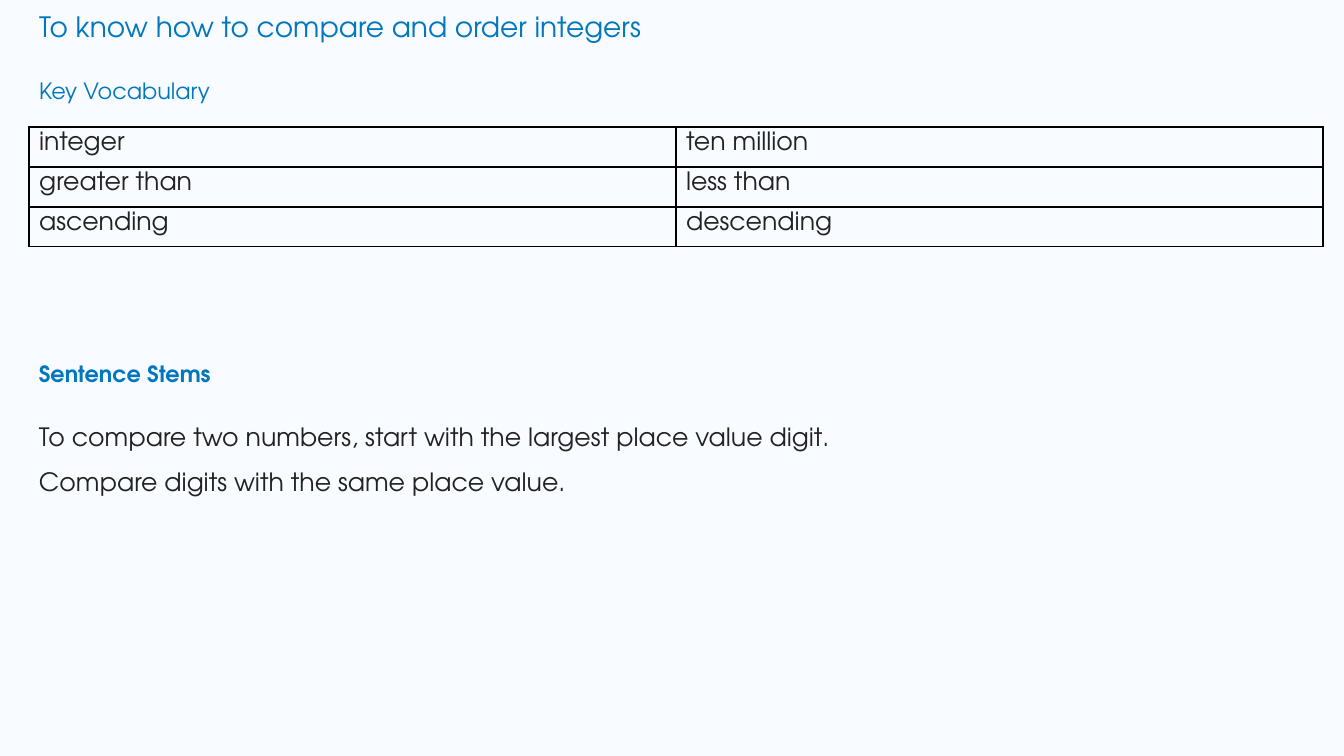
from pptx import Presentation
from pptx.dml.color import RGBColor
from pptx.enum.text import MSO_ANCHOR, MSO_AUTO_SIZE, PP_ALIGN
from pptx.oxml import parse_xml
from pptx.oxml.ns import nsdecls
from pptx.util import Pt

EMU_PER_PX = 914400 / 100.8
FONT = "TeX Gyre Adventor"
COLOURS = {"page": "F8FBFF", "heading": "0277BD", "text": "222222", "border": "000000"}
LEFT = 29
CONTENT_WIDTH = 1294
ROW_HEIGHT = 40
VOCABULARY = [
    ("integer", "ten million"),
    ("greater than", "less than"),
    ("ascending", "descending"),
]
STEMS = [
    "To compare two numbers, start with the largest place value digit.",
    "Compare digits with the same place value.",
]


def px(length):
    return round(length * EMU_PER_PX)


def rgb(name):
    return RGBColor.from_string(COLOURS[name])


def place(box, left, top, width, height):
    box.left, box.top, box.width, box.height = map(px, (left, top, width, height))


def write(frame, lines, size, colour, bold=False, spacing=1):
    frame.word_wrap = True
    for index, line in enumerate(lines):
        para = frame.paragraphs[0] if index == 0 else frame.add_paragraph()
        para.alignment = PP_ALIGN.LEFT
        para.line_spacing = spacing
        para.space_before = Pt(0)
        span = para.add_run()
        span.text = line
        span.font.name = FONT
        span.font.size = Pt(size)
        span.font.bold = bold
        span.font.color.rgb = rgb(colour)


def fill_box(box, area, lines, size, colour, **style):
    place(box, *area)
    frame = box.text_frame
    frame.auto_size = MSO_AUTO_SIZE.NONE
    frame.vertical_anchor = MSO_ANCHOR.TOP
    write(frame, lines, size, colour, **style)


def remove_bullet(para):
    properties = para._p.get_or_add_pPr()
    properties.set("marL", "0")
    properties.set("indent", "0")
    properties.append(parse_xml(f"<a:buNone {nsdecls('a')}/>"))


def add_borders(cell):
    properties = cell._tc.get_or_add_tcPr()
    for index, side in enumerate(("lnL", "lnR", "lnT", "lnB")):
        border = parse_xml(
            f'<a:{side} {nsdecls("a")} w="{Pt(1)}"><a:solidFill>'
            f'<a:srgbClr val="{COLOURS["border"]}"/></a:solidFill></a:{side}>'
        )
        properties.insert(index, border)


def add_vocabulary_table(page, top):
    row_count, column_count = len(VOCABULARY), len(VOCABULARY[0])
    area = map(px, (LEFT, top, CONTENT_WIDTH, ROW_HEIGHT * row_count))
    table = page.shapes.add_table(row_count, column_count, *area).table
    table.first_row = False
    table.horz_banding = False
    for row, words in enumerate(VOCABULARY):
        for column, word in enumerate(words):
            cell = table.cell(row, column)
            cell.fill.background()
            add_borders(cell)
            write(cell.text_frame, [word], 18, "text")


def main():
    deck = Presentation()
    deck.slide_width, deck.slide_height = px(1344), px(756)
    page = deck.slides.add_slide(deck.slide_layouts[1])
    page.background.fill.solid()
    page.background.fill.fore_color.rgb = rgb("page")

    title = page.shapes.title
    fill_box(title, (LEFT, 4, 1244, 44),
             ["To know how to compare and order integers"], 20, "heading")

    vocabulary_heading = page.placeholders[1]
    remove_bullet(vocabulary_heading.text_frame.paragraphs[0])
    fill_box(vocabulary_heading, (LEFT, 72, 300, 46), ["Key Vocabulary"], 16, "heading")
    add_vocabulary_table(page, 127)

    stems_heading = page.shapes.add_textbox(0, 0, 0, 0)
    fill_box(stems_heading, (LEFT, 355, 300, 46), ["Sentence Stems"], 16, "heading", bold=True)

    stems = page.shapes.add_textbox(0, 0, 0, 0)
    fill_box(stems, (LEFT, 401, CONTENT_WIDTH, 96), STEMS, 18, "text", spacing=1.5)

    deck.save("out.pptx")


if __name__ == "__main__":
    main()
